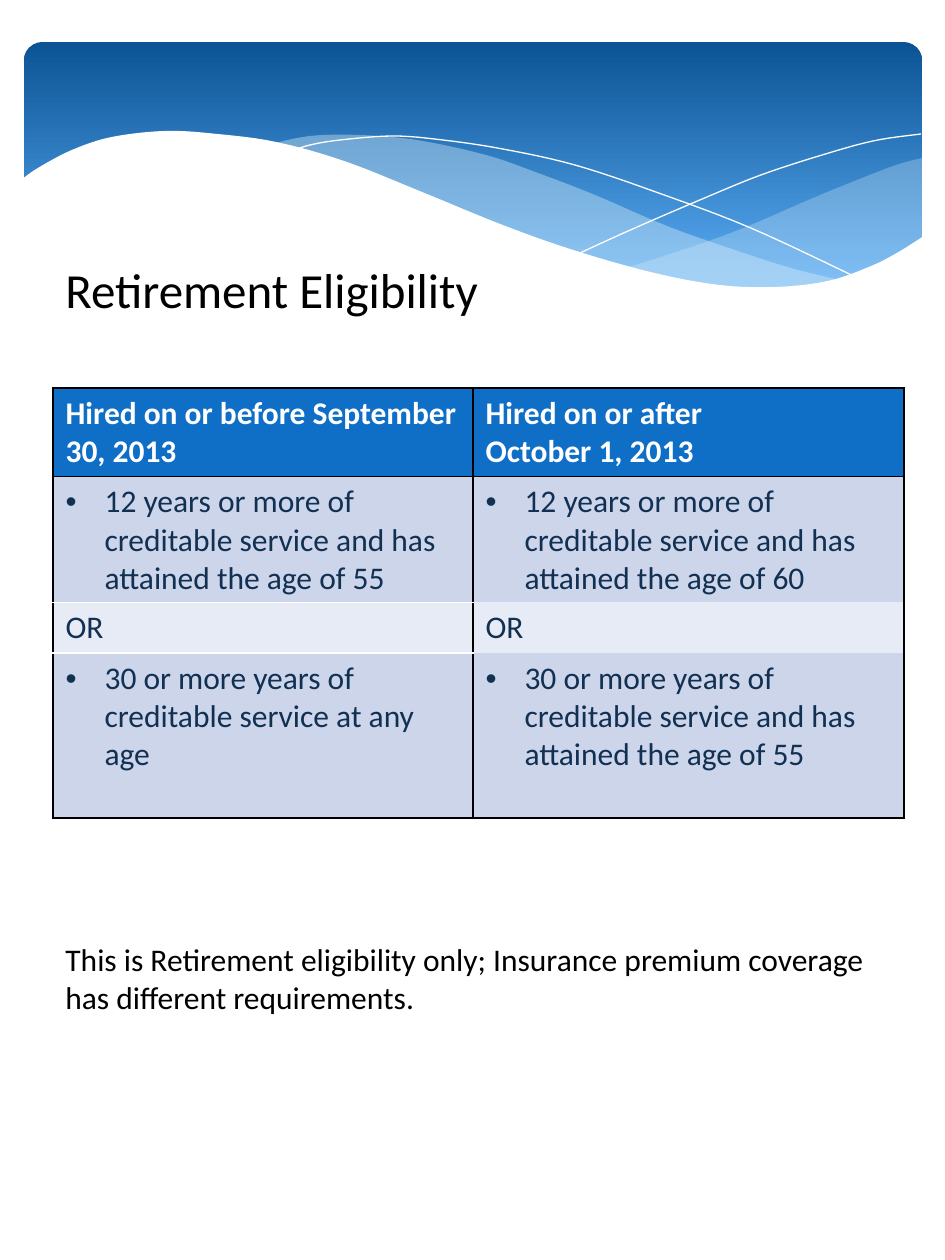
from lxml.etree import SubElement
from pptx import Presentation
from pptx.dml.color import RGBColor
from pptx.enum.shapes import MSO_SHAPE as Shape
from pptx.oxml.ns import qn
from pptx.util import Emu, Pt

# Content
TITLE = "Retirement Eligibility"
NOTE = ("This is Retirement eligibility only; Insurance premium coverage "
        "has different requirements.")
ROWS = [  # each cell is a list of paragraphs
    (["Hired on or before September 30, 2013"], ["Hired on or after", "October 1, 2013"]),
    (["12 years or more of creditable service and has attained the age of 55"],
     ["12 years or more of creditable service and has attained the age of 60"]),
    (["OR"], ["OR"]),
    (["30 or more years of creditable service at any age"],
     ["30 or more years of creditable service and has attained the age of 55"]),
]
BULLET_ROWS = (1, 3)
ROW_FILLS = ["0F6FC6", "CCD5EA", "E7EBF5", "CCD5EA"]
ROW_HEIGHTS = [88, 126, 50, 165]
COLUMN_WIDTHS = [420, 431]

# Waves: each is a list of smooth edges, given by their knots
RIGHT_WAVE = [
    [(922, 158), (896, 165), (857, 180), (813, 198), (736, 231), (667, 255), (625, 268)],
    [(625, 268), (692, 284), (759, 289), (824, 284), (871, 268), (922, 238)],
]
MIDDLE_WAVE = [
    [(271, 144), (310, 136), (359, 135), (417, 140), (486, 155), (538, 173),
     (595, 195), (667, 226), (732, 249), (791, 268), (844, 281)],
    [(844, 281), (801, 289), (762, 291), (707, 286), (643, 273), (568, 252),
     (500, 227), (425, 195), (362, 170), (305, 152), (271, 144)],
]
FALLING_LINE = [[(292, 151), (310, 145), (340, 140), (393, 136), (443, 140),
                 (503, 149), (575, 165), (656, 192), (751, 228), (858, 278)]]
RISING_LINE = [[(580, 253), (635, 228), (707, 197), (761, 175), (819, 156),
                (873, 141), (921, 134)]]
WHITE_WAVE = [
    [(21, 180), (38, 168), (72, 150), (112, 137), (166, 131), (217, 134),
     (276, 142), (344, 161), (422, 192), (500, 224), (570, 249), (650, 272),
     (719, 285), (777, 287), (828, 281), (869, 267), (897, 253), (924, 236)],
    [(924, 375), (21, 375)],
]


def px(value):
    return Emu(round(value * 914400 / 126))


def color(value):
    return RGBColor.from_string(value)


def smooth(knots, steps=6):
    """Catmull-Rom curve through the knots."""
    if len(knots) < 3:
        return knots
    padded = [knots[0], *knots, knots[-1]]
    points = []
    for a, b, c, d in zip(padded, padded[1:], padded[2:], padded[3:]):
        for step in range(steps):
            t = step / steps
            points.append(tuple(
                (2 * q + (r - p) * t + (2 * p - 5 * q + 4 * r - s) * t ** 2
                 + (3 * q - p - 3 * r + s) * t ** 3) / 2
                for p, q, r, s in zip(a, b, c, d)))
    return points + [knots[-1]]


def add_curve(page, edges, fill=None, alpha=100):
    points = [(px(x), px(y)) for edge in edges for x, y in smooth(edge)]
    builder = page.shapes.build_freeform(*points[0], scale=1.0)
    builder.add_line_segments(points[1:], close=fill is not None)
    curve = builder.convert_to_shape()
    curve.shadow.inherit = False
    if fill:
        curve.fill.solid()
        curve.fill.fore_color.rgb = color(fill)
        curve.line.fill.background()
        tint = curve._element.spPr.find(qn("a:solidFill"))[0]
        SubElement(tint, qn("a:alpha"), val=str(alpha * 1000))
    else:
        curve.fill.background()
        curve.line.color.rgb = color("FFFFFF")
        curve.line.width = Pt(0)


def write(para, text, size, ink, bold=False):
    span = para.add_run()
    span.text = text
    span.font.name = "Calibri"
    span.font.size = Pt(size)
    span.font.bold = bold
    span.font.color.rgb = color(ink)


def add_text(page, text, size, left, top, width, height, inset_top):
    box = page.shapes.add_textbox(px(left), px(top), px(width), px(height))
    box.text_frame.word_wrap = True
    box.text_frame.margin_top = px(inset_top)
    write(box.text_frame.paragraphs[0], text, size, "000000")


def set_bullet(para):
    props = para._p.get_or_add_pPr()
    props.set("marL", str(px(39)))
    props.set("indent", str(-px(39)))
    SubElement(props, qn("a:buFont"), typeface="Arial")
    SubElement(props, qn("a:buChar"), char="•")


def set_border(cell, side, ink):
    line = SubElement(cell._tc.get_or_add_tcPr(), qn("a:ln" + side), w=str(Pt(1)))
    if ink:
        SubElement(SubElement(line, qn("a:solidFill")), qn("a:srgbClr"), val=ink)
    else:
        SubElement(line, qn("a:noFill"))


def add_eligibility_table(page):
    table = page.shapes.add_table(
        len(ROWS), len(COLUMN_WIDTHS), px(53), px(388),
        px(sum(COLUMN_WIDTHS)), px(sum(ROW_HEIGHTS))).table
    table.horz_banding = False
    for column, width in zip(table.columns, COLUMN_WIDTHS):
        column.width = px(width)
    for r, texts in enumerate(ROWS):
        table.rows[r].height = px(ROW_HEIGHTS[r])
        for c, lines in enumerate(texts):
            cell = table.cell(r, c)
            # Body rows are parted by white in the first column only
            inner = None if c else "FFFFFF"
            set_border(cell, "L", "000000")
            set_border(cell, "R", "000000")
            set_border(cell, "T", "000000" if r < 2 else inner)
            set_border(cell, "B", "000000" if r in (0, len(ROWS) - 1) else inner)
            cell.fill.solid()
            cell.fill.fore_color.rgb = color(ROW_FILLS[r])
            for i, line in enumerate(lines):
                frame = cell.text_frame
                para = frame.add_paragraph() if i else frame.paragraphs[0]
                if r in BULLET_ROWS:
                    set_bullet(para)
                write(para, line, 18, "113052" if r else "FFFFFF", bold=r == 0)


def add_banner(page):
    banner = page.shapes.add_shape(Shape.ROUNDED_RECTANGLE, px(24), px(42), px(898), px(263))
    banner.adjustments[0] = 0.07
    banner.shadow.inherit = False
    banner.line.fill.background()
    banner.fill.gradient()
    banner.fill.gradient_angle = 270
    stops = [(0, "0B5394"), (0.9, "59AAF2")]
    for stop, (position, ink) in zip(banner.fill.gradient_stops, stops):
        stop.position = position
        stop.color.rgb = color(ink)
    add_curve(page, RIGHT_WAVE, "DBEFF9", 29)
    add_curve(page, MIDDLE_WAVE, "DBEFF9", 40)
    add_curve(page, FALLING_LINE)
    add_curve(page, RISING_LINE)
    add_curve(page, WHITE_WAVE, "FFFFFF")


def main():
    deck = Presentation()
    deck.slide_width, deck.slide_height = px(945), px(1260)
    page = deck.slides.add_slide(deck.slide_layouts[6])
    add_banner(page)
    add_text(page, TITLE, 28, 53, 73, 829, 364, inset_top=186)
    add_eligibility_table(page)
    add_text(page, NOTE, 18, 53, 703, 851, 357, inset_top=237)
    deck.save("out.pptx")


if __name__ == "__main__":
    main()
